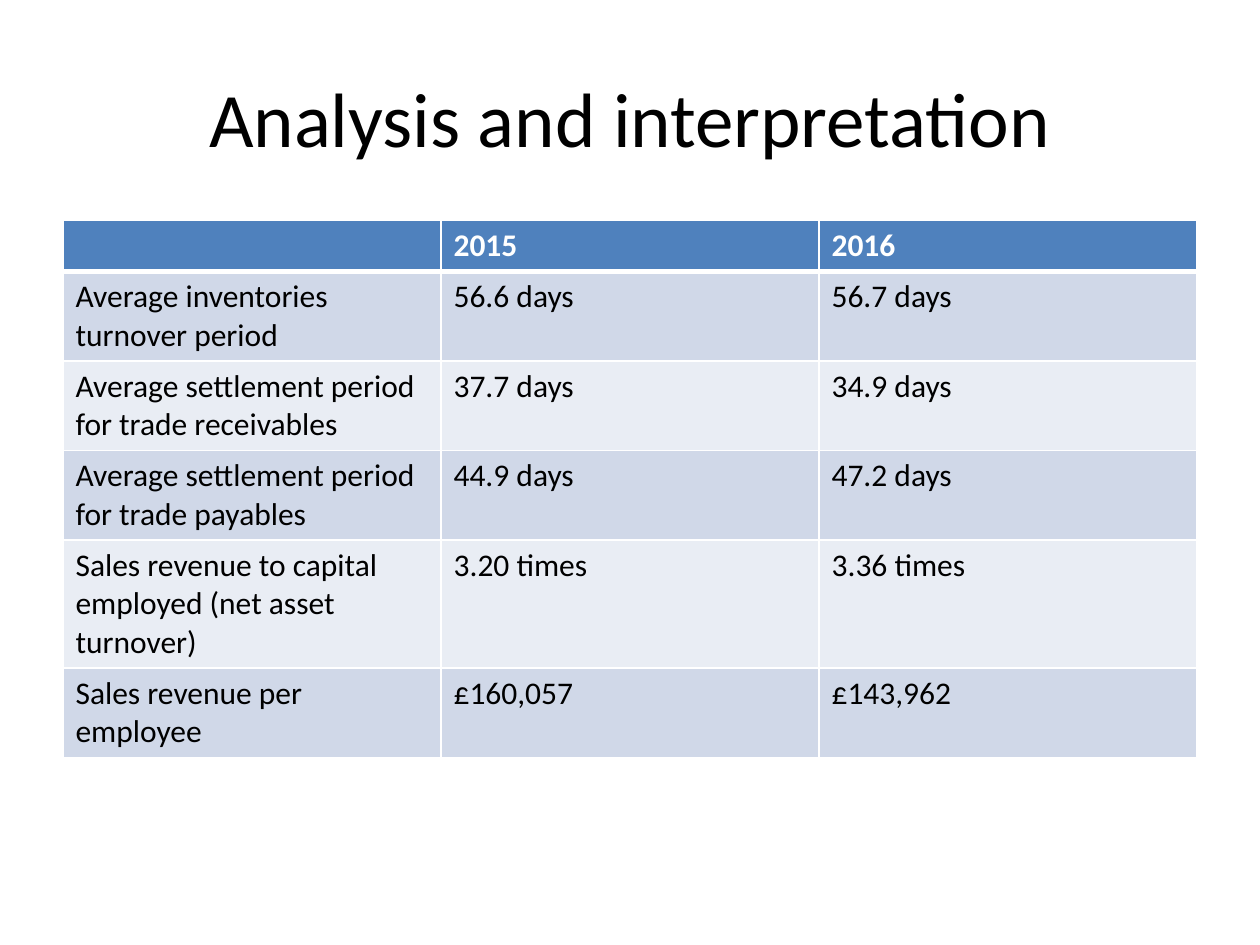
from lxml import etree
from pptx import Presentation
from pptx.dml.color import RGBColor
from pptx.enum import text
from pptx.oxml import ns
from pptx.util import Pt

FONT = "Calibri"
COLOURS = {
    "white": "FFFFFF",
    "black": "000000",
    "header": "4F81BD",
    "odd_row": "D0D8E8",
    "even_row": "E9EDF4",
}
RATIOS = [
    ("", "2015", "2016"),
    ("Average inventories turnover period", "56.6 days", "56.7 days"),
    ("Average settlement period for trade receivables", "37.7 days", "34.9 days"),
    ("Average settlement period for trade payables", "44.9 days", "47.2 days"),
    ("Sales revenue to capital employed (net asset turnover)", "3.20 times", "3.36 times"),
    ("Sales revenue per employee", "£160,057", "£143,962"),
]
LEFT, WIDTH = 36, 648
ROW_HEIGHT = 29.2


def colour(name):
    return RGBColor.from_string(COLOURS[name])


def add_run(paragraph, wording, size, colour_name, bold=False):
    run = paragraph.add_run()
    run.text = wording
    run.font.name = FONT
    run.font.size = Pt(size)
    run.font.bold = bold
    run.font.color.rgb = colour(colour_name)


def add_heading(slide, wording):
    heading = slide.shapes.title
    heading.left, heading.top = Pt(LEFT), Pt(21.6)
    heading.width, heading.height = Pt(WIDTH), Pt(90)
    heading.fill.solid()
    heading.fill.fore_color.rgb = colour("white")
    heading.line.fill.background()
    frame = heading.text_frame
    frame.word_wrap = True
    frame.vertical_anchor = text.MSO_ANCHOR.MIDDLE
    paragraph = frame.paragraphs[0]
    paragraph.alignment = text.PP_ALIGN.CENTER
    add_run(paragraph, wording, 44, "black")


def set_borders(cell, top, bottom):
    properties = cell._tc.get_or_add_tcPr()
    widths = {"lnL": 1, "lnR": 1, "lnT": top, "lnB": bottom}
    for position, (edge, width) in enumerate(widths.items()):
        border = etree.Element(ns.qn(f"a:{edge}"), w=str(Pt(width)))
        fill = etree.SubElement(border, ns.qn("a:solidFill"))
        etree.SubElement(fill, ns.qn("a:srgbClr"), val=COLOURS["white"])
        properties.insert(position, border)


def format_cell(cell, wording, row):
    header = row == 0
    band = "header" if header else "odd_row" if row % 2 else "even_row"
    cell.fill.solid()
    cell.fill.fore_color.rgb = colour(band)
    set_borders(cell, top=3 if row == 1 else 1, bottom=3 if header else 1)
    if wording:
        add_run(cell.text_frame.paragraphs[0], wording, 18,
                "white" if header else "black", header)


def add_ratio_table(slide, ratios):
    rows, columns = len(ratios), len(ratios[0])
    table = slide.shapes.add_table(
        rows, columns, Pt(LEFT), Pt(126), Pt(WIDTH), Pt(ROW_HEIGHT * rows)
    ).table
    for row, values in enumerate(ratios):
        for column, wording in enumerate(values):
            format_cell(table.cell(row, column), wording, row)


def main():
    presentation = Presentation()
    presentation.slide_width, presentation.slide_height = Pt(720), Pt(540)
    slide = presentation.slides.add_slide(presentation.slide_layouts[5])
    add_heading(slide, "Analysis and interpretation")
    add_ratio_table(slide, RATIOS)
    presentation.save("out.pptx")


if __name__ == "__main__":
    main()
